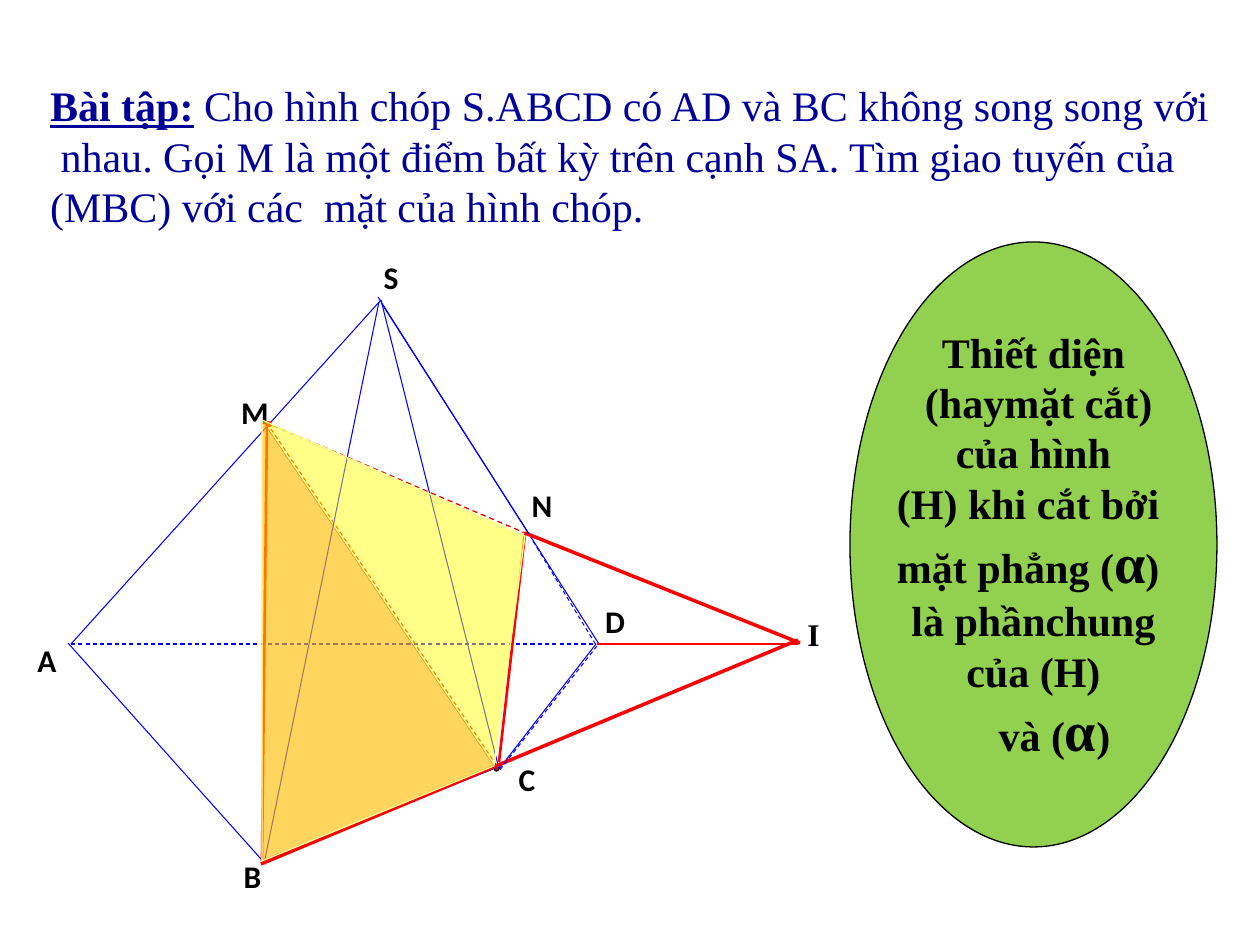
from dataclasses import dataclass

from lxml import etree
from pptx import Presentation, util as u
from pptx.dml.color import RGBColor
from pptx.enum import dml, shapes, text
from pptx.oxml.ns import qn

EMU_PER_PX = 914400 / 126


def px(length: int) -> u.Emu:
    return u.Emu(round(length * EMU_PER_PX))


@dataclass(frozen=True)
class Theme:
    serif: str = "Times New Roman"
    sans: str = "Calibri"
    blue: str = "0000FF"
    red: str = "FF0000"
    yellow: str = "FFFF00"
    pale_yellow: str = "FFFF99"
    navy: str = "000099"
    green: str = "92D050"
    black: str = "000000"
    white: str = "FFFFFF"
    body_size: int = 24
    label_size: int = 18
    symbol_size: int = 32
    hairline: float = 0.6
    thin: float = 0.75
    medium: float = 1.5
    thick: float = 2


THEME = Theme()


@dataclass(frozen=True)
class Edge:
    start: tuple[int, int]
    end: tuple[int, int]
    color: str = THEME.blue
    width: float = THEME.hairline
    dashed: bool = False


@dataclass(frozen=True)
class Label:
    name: str
    box: tuple[int, int, int, int]
    font: str = THEME.sans
    size: int = THEME.label_size
    color: str = THEME.black
    inset: bool = False


@dataclass(frozen=True)
class Section:
    corners: list[tuple[int, int]]
    fill: str
    opacity: int
    outline: str
    width: float


@dataclass(frozen=True)
class Span:
    words: str
    size: int = THEME.body_size
    bold: bool = True
    underline: bool = False


PYRAMID = [
    Edge((381, 300), (71, 644)),
    Edge((68, 643), (261, 859)),
    Edge((596, 644), (499, 769)),
    Edge((378, 297), (599, 644)),
    Edge((379, 302), (265, 859)),
    Edge((71, 644), (596, 644), dashed=True),
    Edge((381, 300), (499, 769)),
    Edge((267, 423), (499, 769), THEME.red, dashed=True),
]
VERTEX_LABELS = [
    Label("S", (377, 258, 28, 34)),
    Label("A", (32, 641, 30, 38)),
    Label("C", (512, 760, 30, 38)),
    Label("D", (600, 602, 30, 38)),
    Label("N", (527, 486, 30, 38)),
    Label("M", (238, 393, 34, 38)),
]
CUTTING_PLANE = [
    Edge((500, 766), (262, 861), width=1),
    Edge((267, 422), (262, 861), THEME.red, THEME.medium),
    Edge((525, 534), (499, 762), THEME.red, THEME.medium),
]
PLANE_LABELS = [
    Label("B", (221, 851, 63, 50), inset=True),
    Label(".", (251, 379, 32, 63), size=THEME.body_size, color=THEME.red, inset=True),
    Label("I", (777, 609, 73, 50), THEME.serif, inset=True),
]
EXTENSIONS = [
    Edge((599, 644), (798, 644), THEME.red, THEME.thin),
    Edge((261, 864), (798, 640), THEME.red, THEME.thick),
    Edge((525, 533), (800, 643), THEME.red, THEME.thick),
    Edge((265, 422), (525, 533), THEME.red, THEME.thin, dashed=True),
]
HIDDEN_EDGES = [
    Edge((533, 541), (596, 645), dashed=True),
    Edge((597, 646), (499, 771), dashed=True),
    Edge((382, 304), (529, 534)),
    Edge((597, 644), (796, 644), THEME.red, THEME.thin, dashed=True),
]
B, M, N, C = (262, 861), (262, 420), (525, 536), (494, 766)
TRIANGLE_MBC = Section([B, M, C], THEME.red, 31, THEME.red, 0.25)
SECTION_MNCB = Section([B, M, N, C], THEME.yellow, 47, THEME.pale_yellow, THEME.thin)

EXERCISE = [
    [Span("Bài tập:", underline=True),
     Span(" Cho hình chóp S.ABCD có AD và BC không song song với", bold=False)],
    [Span(" nhau. Gọi M là một điểm bất kỳ trên cạnh SA. Tìm giao tuyến của", bold=False)],
    [Span("(MBC) với các  mặt của hình chóp.", bold=False)],
]
ALPHA = Span("α", THEME.symbol_size)
DEFINITION = [
    [Span("Thiết diện")],
    [Span(" (haymặt cắt)")],
    [Span("của hình")],
    [Span("(H) khi cắt bởi ")],
    [Span("mặt phẳng ("), ALPHA, Span(") ")],
    [Span("là phầnchung")],
    [Span(" của (H) ")],
    [Span("và ("), ALPHA, Span(")")],
]


def rgb(color: str) -> RGBColor:
    return RGBColor.from_string(color)


def paint(shape, fill: str, outline: str | None = None, width: float = THEME.thin) -> None:
    shape.shadow.inherit = False
    shape.fill.solid()
    shape.fill.fore_color.rgb = rgb(fill)
    if outline is None:
        shape.line.fill.background()
    else:
        shape.line.color.rgb = rgb(outline)
        shape.line.width = u.Pt(width)


def draw_edge(slide, edge: Edge) -> None:
    line = slide.shapes.add_connector(
        shapes.MSO_CONNECTOR.STRAIGHT, *map(px, edge.start + edge.end))
    line.line.color.rgb = rgb(edge.color)
    line.line.width = u.Pt(edge.width)
    if edge.dashed:
        line.line.dash_style = dml.MSO_LINE.DASH
    etree.SubElement(line._element.spPr, qn("a:effectLst"))


def draw_label(slide, label: Label) -> None:
    frame = slide.shapes.add_textbox(*map(px, label.box)).text_frame
    frame.word_wrap = False
    if not label.inset:
        frame.margin_left = frame.margin_right = frame.margin_top = frame.margin_bottom = 0
    frame.text = label.name
    paragraph = frame.paragraphs[0]
    paragraph.alignment = text.PP_ALIGN.CENTER
    font = paragraph.runs[0].font
    font.name, font.size, font.bold = label.font, u.Pt(label.size), True
    font.color.rgb = rgb(label.color)


def draw_section(slide, section: Section) -> None:
    first, *rest = section.corners
    builder = slide.shapes.build_freeform(*first, scale=EMU_PER_PX)
    builder.add_line_segments(rest, close=True)
    area = builder.convert_to_shape()
    paint(area, section.fill, section.outline, section.width)
    color = area._element.spPr.find(qn("a:solidFill"))[0]
    etree.SubElement(color, qn("a:alpha"), val=str(section.opacity * 1000))


def write(frame, lines: list[list[Span]], color: str, alignment) -> None:
    frame.word_wrap = False
    frame.vertical_anchor = text.MSO_ANCHOR.MIDDLE
    for index, spans in enumerate(lines):
        paragraph = frame.add_paragraph() if index else frame.paragraphs[0]
        paragraph.alignment = alignment
        for span in spans:
            run = paragraph.add_run()
            run.text = span.words
            font = run.font
            font.name, font.size = THEME.serif, u.Pt(span.size)
            font.bold, font.underline = span.bold, span.underline
            font.color.rgb = rgb(color)


def draw_exercise(slide) -> None:
    panel = slide.shapes.add_shape(
        shapes.MSO_SHAPE.ROUNDED_RECTANGLE, *map(px, (32, 71, 1091, 118)))
    paint(panel, THEME.white)
    panel.text_frame.margin_top = px(57)
    write(panel.text_frame, EXERCISE, THEME.navy, text.PP_ALIGN.LEFT)


def draw_definition(slide) -> None:
    oval = slide.shapes.add_shape(shapes.MSO_SHAPE.OVAL, *map(px, (850, 242, 367, 605)))
    paint(oval, THEME.green, THEME.black)
    write(oval.text_frame, DEFINITION, THEME.black, text.PP_ALIGN.CENTER)
    closing_line = oval.text_frame.paragraphs[-1]
    closing_line._p.get_or_add_pPr().set("marL", str(px(42)))


def main() -> None:
    deck = Presentation()
    deck.slide_width, deck.slide_height = px(1260), px(945)
    slide = deck.slides.add_slide(deck.slide_layouts[6])

    for edge in PYRAMID:
        draw_edge(slide, edge)
    point_c = slide.shapes.add_shape(shapes.MSO_SHAPE.OVAL, *map(px, (494, 765, 5, 6)))
    paint(point_c, THEME.red, THEME.black, 0)
    for label in VERTEX_LABELS:
        draw_label(slide, label)
    for edge in CUTTING_PLANE:
        draw_edge(slide, edge)
    for label in PLANE_LABELS:
        draw_label(slide, label)
    for edge in EXTENSIONS:
        draw_edge(slide, edge)
    draw_section(slide, TRIANGLE_MBC)
    for edge in HIDDEN_EDGES:
        draw_edge(slide, edge)
    draw_section(slide, SECTION_MNCB)
    draw_exercise(slide)
    draw_definition(slide)
    deck.save("out.pptx")


if __name__ == "__main__":
    main()
